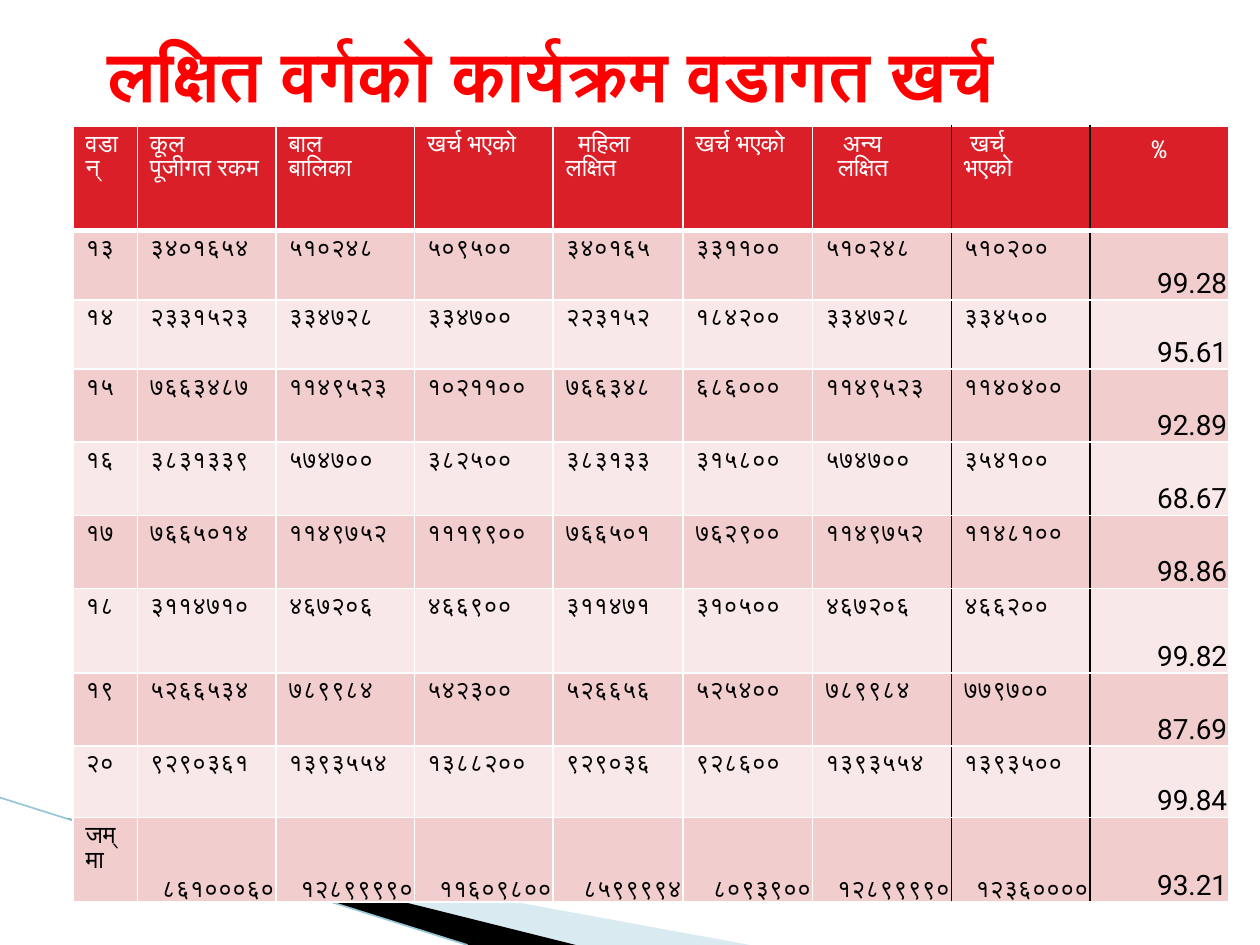
from dataclasses import dataclass

from lxml import etree
from pptx import Presentation
from pptx.dml.color import RGBColor
from pptx.enum.shapes import MSO_CONNECTOR
from pptx.enum.text import MSO_ANCHOR, PP_ALIGN
from pptx.oxml.ns import qn
from pptx.util import Inches, Pt

LEFT, CENTER, RIGHT = PP_ALIGN.LEFT, PP_ALIGN.CENTER, PP_ALIGN.RIGHT
TOP, MIDDLE, BOTTOM = MSO_ANCHOR.TOP, MSO_ANCHOR.MIDDLE, MSO_ANCHOR.BOTTOM
STRAIGHT = MSO_CONNECTOR.STRAIGHT


@dataclass(frozen=True)
class Theme:
    title: str = "FF0000"
    header: str = "DA1F28"
    bands: tuple = ("F1CDCD", "F8E8E8")
    black: str = "000000"
    white: str = "FFFFFF"
    pale_wave: str = "A0CBDC"
    wave_line: str = "97C5D8"
    title_font: str = "Calibri"
    table_font: str = "Noto Sans Mono"
    percent_font: str = "Roboto"
    title_size: int = 40
    table_size: int = 14
    percent_size: int = 16


theme = Theme()

# Header paragraphs for each column: (text, left indent in inches)
HEADERS = [
    [("वडा", 0), ("न्", 0)],
    [("कूल", 0), ("पूजीगत रकम", 0)],
    [("बाल", 0), ("बालिका", 0)],
    [("खर्च भएको", 0)],
    [("महिला", 0.1), ("लक्षित", 0)],
    [("खर्च भएको", 0)],
    [("अन्य", 0.14), ("लक्षित", 0.1)],
    [("खर्च", 0.05), ("भएको", 0)],
    [("%", 0)],
]
WARDS = [
    "१३ ३४०१६५४ ५१०२४८ ५०९५०० ३४०१६५ ३३११०० ५१०२४८ ५१०२०० 99.28",
    "१४ २३३१५२३ ३३४७२८ ३३४७०० २२३१५२ १८४२०० ३३४७२८ ३३४५०० 95.61",
    "१५ ७६६३४८७ ११४९५२३ १०२११०० ७६६३४८ ६८६००० ११४९५२३ ११४०४०० 92.89",
    "१६ ३८३१३३९ ५७४७०० ३८२५०० ३८३१३३ ३१५८०० ५७४७०० ३५४१०० 68.67",
    "१७ ७६६५०१४ ११४९७५२ १११९९०० ७६६५०१ ७६२९०० ११४९७५२ ११४८१०० 98.86",
    "१८ ३११४७१० ४६७२०६ ४६६९०० ३११४७१ ३१०५०० ४६७२०६ ४६६२०० 99.82",
    "१९ ५२६६५३४ ७८९९८४ ५४२३०० ५२६६५६ ५२५४०० ७८९९८४ ७७९७०० 87.69",
    "२० ९२९०३६१ १३९३५५४ १३८८२०० ९२९०३६ ९२८६०० १३९३५५४ १३९३५०० 99.84",
    "जम्मा ८६१०००६० १२८९९९९० ११६०९८०० ८५९९९९४ ८०९३९०० १२८९९९९० १२३६०००० 93.21",
]
COLUMN_WIDTHS = [0.51, 1.1, 1.1, 1.1, 1.03, 1.03, 1.1, 1.1, 1.1]
ROW_HEIGHTS = [0.83, 0.55, 0.55, 0.58, 0.58, 0.58, 0.67, 0.58, 0.57, 0.67]
BLACK_RULES = (7, 8)  # columns with a black rule on their left


def style_font(font, name, size, color):
    font.name = name
    font.size = Pt(size)
    font.color.rgb = RGBColor.from_string(color)


def add_border(cell, side, color, width):
    line = etree.SubElement(cell._tc.get_or_add_tcPr(), qn(f"a:ln{side}"), w=str(Pt(width)))
    fill = etree.SubElement(line, qn("a:solidFill"))
    etree.SubElement(fill, qn("a:srgbClr"), val=color)


deck = Presentation()
deck.slide_width, deck.slide_height = Inches(10), Inches(7.5)
page = deck.slides.add_slide(deck.slide_layouts[5])

# Corner waves
waves = [
    (theme.pale_wave, 40, [(0.55, 6.51), (5.95, 7.5), (4.56, 7.5), (0.55, 6.5)]),
    (theme.black, 100, [(0.53, 6.49), (4.57, 7.5), (3.72, 7.5), (0.54, 6.5)]),
]
for color, opacity, points in waves:
    corners = [(Inches(x), Inches(y)) for x, y in points]
    outline = page.shapes.build_freeform(*corners[0])
    outline.add_line_segments(corners[1:], close=True)
    wave = outline.convert_to_shape()
    wave.shadow.inherit = False
    wave.fill.solid()
    wave.fill.fore_color.rgb = RGBColor.from_string(color)
    wave.line.fill.background()
    if opacity < 100:
        tint = wave._element.spPr.find(f".//{qn('a:srgbClr')}")
        etree.SubElement(tint, qn("a:alpha"), val=str(opacity * 1000))

wave_line = page.shapes.add_connector(
    STRAIGHT, Inches(0), Inches(6.33), Inches(3.71), Inches(7.5))
wave_line.line.color.rgb = RGBColor.from_string(theme.wave_line)
wave_line.line.width = Pt(0.95)
etree.SubElement(wave_line._element.spPr, qn("a:effectLst"))

# Title
title = page.shapes.title
title.left, title.top = Inches(0.75), Inches(0.17)
title.width, title.height = Inches(8.33), Inches(0.83)
title.text_frame.text = "लक्षित वर्गको कार्यक्रम वडागत खर्च"
title.text_frame.vertical_anchor = MIDDLE
title.text_frame.word_wrap = True
heading = title.text_frame.paragraphs[0]
heading.alignment = LEFT
heading.font.bold = True
style_font(heading.font, theme.title_font, theme.title_size, theme.title)

# Ward spending table
rows = [HEADERS] + [[[(value, 0)] for value in ward.split()] for ward in WARDS]
last_row, last_column = len(rows) - 1, len(HEADERS) - 1
table = page.shapes.add_table(
    len(rows), len(HEADERS), Inches(0.58), Inches(1), Inches(9.17), Inches(6.17)).table
for column, width in zip(table.columns, COLUMN_WIDTHS):
    column.width = Inches(width)
for table_row, height in zip(table.rows, ROW_HEIGHTS):
    table_row.height = Inches(height)

for row, entries in enumerate(rows):
    is_header = row == 0
    for column, lines in enumerate(entries):
        cell = table.cell(row, column)
        is_percent = column == last_column and not is_header
        is_total = row == last_row and column > 0

        name, size, alignment = theme.table_font, theme.table_size, LEFT
        if is_percent:
            name, size = theme.percent_font, theme.percent_size
        elif is_total:
            name = theme.title_font
        if is_percent or is_total:
            alignment = RIGHT
            cell.vertical_anchor = BOTTOM
            cell.margin_left = cell.margin_right = cell.margin_top = Inches(0.01)
            cell.margin_bottom = 0
        else:
            cell.vertical_anchor = TOP
            if column == last_column:
                alignment = CENTER

        cell.text = "\n".join(text for text, indent in lines)
        for para, (text, indent) in zip(cell.text_frame.paragraphs, lines):
            para.alignment = alignment
            if indent:
                para._p.get_or_add_pPr().set("marL", str(Inches(indent)))
            para.font.bold = False
            style_font(para.font, name, size, theme.white if is_header else theme.black)

        add_border(cell, "L", theme.black if column in BLACK_RULES else theme.white, 1)
        add_border(cell, "R", theme.black if column + 1 in BLACK_RULES else theme.white, 1)
        add_border(cell, "T", theme.white, 1)
        add_border(cell, "B", theme.white, 3 if is_header else 1)
        cell.fill.solid()
        cell.fill.fore_color.rgb = RGBColor.from_string(
            theme.header if is_header else theme.bands[(row - 1) % 2])

deck.save("out.pptx")
